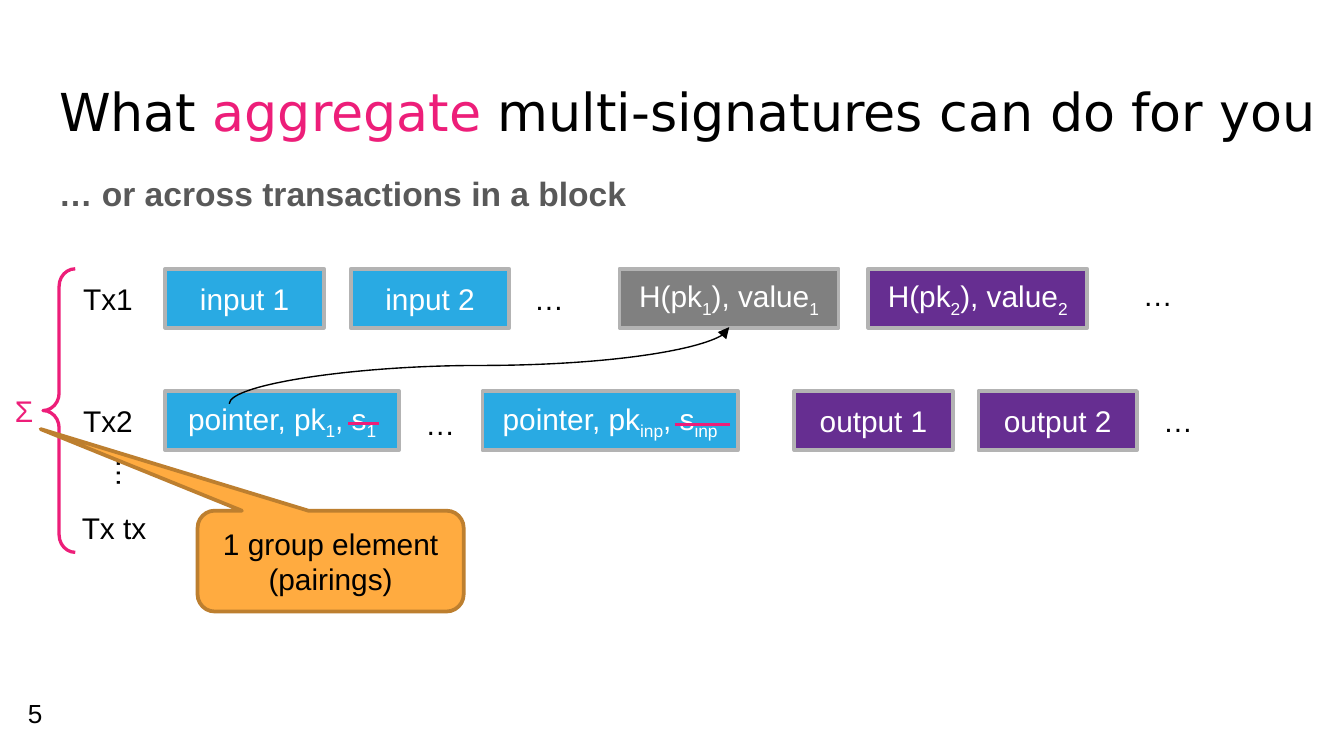
from pptx import Presentation
from pptx.dml.color import RGBColor
from pptx.enum.shapes import MSO_CONNECTOR as LINK, MSO_SHAPE as FORM
from pptx.enum.text import MSO_ANCHOR as ANCHOR, MSO_AUTO_SIZE as FIT, PP_ALIGN as ALIGN
from pptx.oxml.ns import qn
from pptx.util import Inches, Pt
from lxml.etree import SubElement

HUES = {
    "black": "000000", "white": "FFFFFF", "dim": "595959",
    "pink": "ED1E79", "blue": "29AAE3", "plum": "662E91",
    "gray": "808080", "edge": "B3B3B3", "gold": "FFAB40", "rust": "BD7F2F",
}
HUE = {name: RGBColor.from_string(code) for name, code in HUES.items()}

deck = Presentation()
deck.slide_width = Inches(10)
deck.slide_height = deck.slide_width * 9 // 16
unit = deck.slide_width / 100  # grid of 100 columns, with square cells
slide = deck.slides.add_slide(deck.slide_layouts[5])
shapes = slide.shapes


def grid(*cells):
    return [round(cell * unit) for cell in cells]


def write(shape, text, hue="black", size=16, align=ALIGN.CENTER,
          anchor=ANCHOR.MIDDLE, pad=(1, 0.5), font="Arial", accent=None, bold=False):
    """Fill a shape; each second part between bars is accented, or else subscript."""
    frame = shape.text_frame
    frame.word_wrap, frame.auto_size = True, FIT.NONE
    frame.vertical_anchor = anchor
    frame.margin_left = frame.margin_right = grid(pad[0])[0]
    frame.margin_top = frame.margin_bottom = grid(pad[1])[0]
    para = frame.paragraphs[0]
    para.alignment = align
    for i, part in enumerate(text.split("|")):
        if not part:
            continue
        run = para.add_run()
        run.text = part
        run.font.name, run.font.size, run.font.bold = font, Pt(size), bold
        run.font.color.rgb = HUE[hue]
        if i % 2 and accent:
            run.font.color.rgb = HUE[accent]
        elif i % 2:
            run.font._element.set("baseline", "-25000")


# Title and subtitle
title = shapes.title
title.left, title.top, title.width, title.height = grid(3.4, 4.9, 96.6, 6.3)
write(title, "What |aggregate| multi-signatures can do for you", size=28,
      align=ALIGN.LEFT, anchor=ANCHOR.TOP, pad=(1, 1), font="DejaVu Sans", accent="pink")
lead = shapes.add_textbox(*grid(3.4, 12.4, 48.7, 4))
write(lead, "… or across transactions in a block", "dim", 18, ALIGN.LEFT, ANCHOR.TOP, bold=True)

# Inputs and outputs of the two transactions
TX1, TX2 = 20, 29.1
for left, top, wide, hue, text in [
    (12.3, TX1, 11.8, "blue", "input 1"),
    (26.1, TX1, 11.8, "blue", "input 2"),
    (46.1, TX1, 16.3, "gray", "H(pk|1|), value|1"),
    (64.6, TX1, 16.3, "plum", "H(pk|2|), value|2"),
    (12.3, TX2, 17.4, "blue", "pointer, pk|1|, s|1"),
    (35.9, TX2, 19, "blue", "pointer, pk|inp|, s|inp"),
    (59.1, TX2, 11.8, "plum", "output 1"),
    (72.8, TX2, 11.8, "plum", "output 2"),
]:
    box = shapes.add_shape(FORM.RECTANGLE, *grid(left, top, wide, 4.4))
    box.shadow.inherit = False
    box.fill.solid()
    box.fill.fore_color.rgb = HUE[hue]
    box.line.color.rgb, box.line.width = HUE["edge"], Pt(2)
    write(box, text, "white")

# Row labels and the sum sign
for left, top, wide, text, hue, align in [
    (5.2, TX1 + 0.4, 6.1, "Tx1", "black", ALIGN.LEFT),
    (5.2, TX2 + 0.4, 6.1, "Tx2", "black", ALIGN.LEFT),
    (5.1, 37.4, 7.1, "Tx tx", "black", ALIGN.LEFT),
    (0.1, 28.7, 3.4, "Σ", "pink", ALIGN.CENTER),
]:
    label = shapes.add_textbox(*grid(left, top, wide, 3.7))
    write(label, text, hue, align=align, anchor=ANCHOR.TOP)

for left, top, turn in [(37.8, 20.4, 0), (83.1, 20.1, 0), (29.7, 29.7, 0),
                        (84.6, 29.5, 0), (6.5, 33.4, 90)]:
    dots = shapes.add_textbox(*grid(left, top, 6.1, 3.7))
    dots.rotation = turn
    write(dots, "…", anchor=ANCHOR.TOP)

# Arrow from the pointer to the output it spends, and strikes over signatures
for kind, ends, hue, width in [
    (LINK.CURVE, (38.5, 45.8, 32.8, 8.6), "black", 0.75),
    (LINK.STRAIGHT, (25.9, 31.5, 28.2, 31.5), "pink", 1.75),
    (LINK.STRAIGHT, (50.2, 31.6, 54.3, 31.6), "pink", 1.75),
]:
    link = shapes.add_connector(kind, *grid(*ends))
    link.line.color.rgb, link.line.width = HUE[hue], Pt(width)
    props = link.element.spPr
    if kind == LINK.CURVE:
        props.find(qn("a:xfrm")).set("rot", str(90 * 60000))
        SubElement(props.find(qn("a:ln")), qn("a:tailEnd"), type="triangle")
    SubElement(props, qn("a:effectLst"))

# Brace over all transactions
brace = shapes.add_shape(FORM.LEFT_BRACE, *grid(3.2, 20, 2.4, 21.1))
brace.shadow.inherit = False
brace.fill.background()
brace.line.color.rgb, brace.line.width = HUE["pink"], Pt(1.75)
brace.adjustments[0], brace.adjustments[1] = 0.54, 0.5

# Callout on the aggregate
note = shapes.add_shape(FORM.ROUNDED_RECTANGULAR_CALLOUT, *grid(14.7, 38, 19.8, 7.5))
note.shadow.inherit = False
note.fill.solid()
note.fill.fore_color.rgb = HUE["gold"]
note.line.color.rgb, note.line.width = HUE["rust"], Pt(2)
for i, share in enumerate((-1.09, -1.31, 0.17)):
    note.adjustments[i] = share
write(note, "1 group element (pairings)", pad=(0, 0))

page = shapes.add_textbox(*grid(1.1, 50.9, 6, 4.3))
write(page, "5", size=14, align=ALIGN.LEFT, pad=(1, 1))

deck.save("out.pptx")
